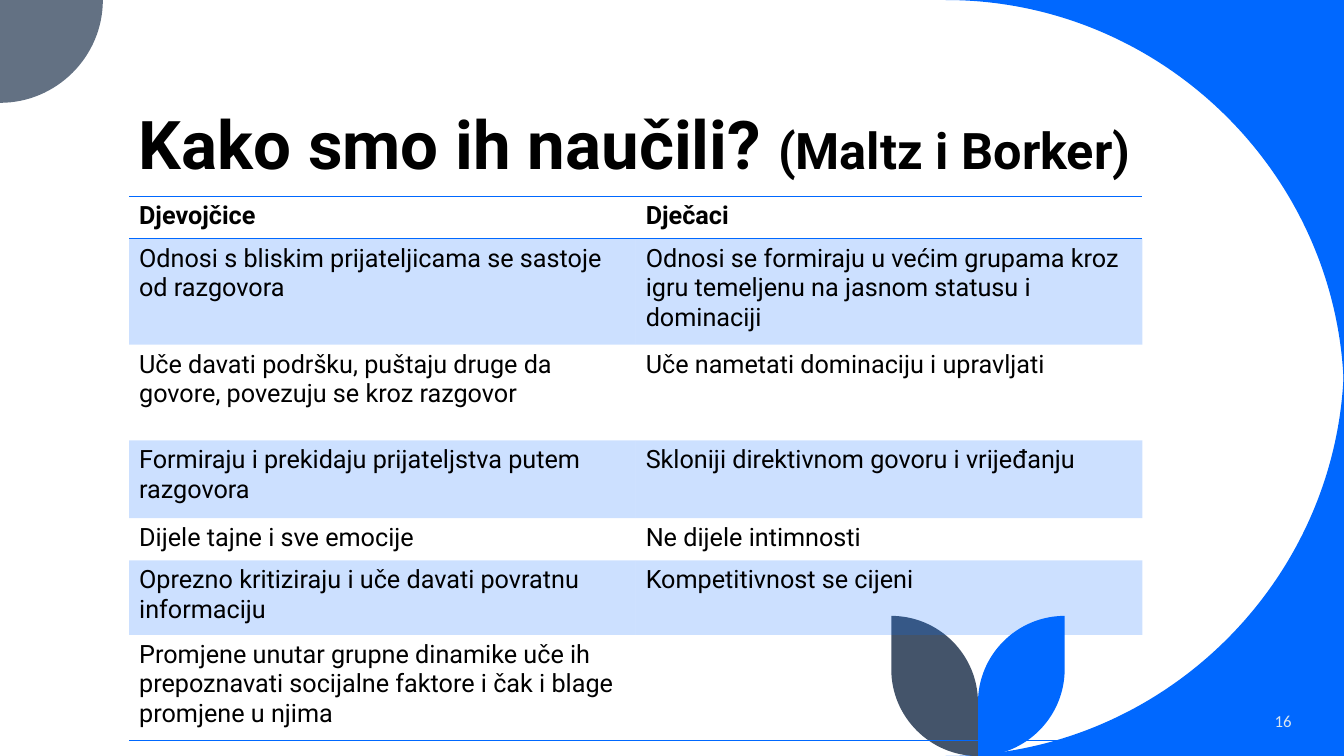
"""Build the slide on how girls and boys learn to talk."""
from lxml import etree
from pptx import Presentation
from pptx import util as u
from pptx.dml.color import RGBColor
from pptx.enum import text
from pptx.oxml import ns

COLORS = {"blue": "0068FF", "grey": "637183", "slate": "44546A",
          "black": "000000", "pale": "DAE5EF"}
NO_STYLE = "{2D5ABB26-0587-4C30-8999-92F81FD0307C}"
ROUNDNESS = 0.55
ROW_HEIGHTS = [0.42, 1.05, 0.95, 0.77, 0.42, 0.74, 1.05]
ROWS = [
    ("Djevojčice", "Dječaci"),
    ("Odnosi s bliskim prijateljicama se sastoje od razgovora",
     "Odnosi se formiraju u većim grupama kroz igru temeljenu na jasnom statusu i dominaciji"),
    ("Uče davati podršku, puštaju druge da govore, povezuju se kroz razgovor",
     "Uče nametati dominaciju i upravljati"),
    ("Formiraju i prekidaju prijateljstva putem razgovora",
     "Skloniji direktivnom govoru i vrijeđanju"),
    ("Dijele tajne i sve emocije", "Ne dijele intimnosti"),
    ("Oprezno kritiziraju i uče davati povratnu informaciju",
     "Kompetitivnost se cijeni"),
    ("Promjene unutar grupne dinamike uče ih prepoznavati socijalne faktore "
     "i čak i blage promjene u njima", ""),
]


def rgb(name):
    """Return the named colour."""
    return RGBColor.from_string(COLORS[name])


def style_font(font, size, color, face="Roboto", bold=False):
    """Set the look of a font."""
    font.size, font.name, font.bold = u.Pt(size), face, bold
    font.color.rgb = rgb(color)


def bend(segment, start, end, corner, origin):
    """Turn a straight segment into a quarter arc that bulges towards a corner."""
    segment.tag = ns.qn("a:cubicBezTo")
    controls = [[p + ROUNDNESS * (k - p) for p, k in zip(point, corner)]
                for point in (start, end)]
    for position, control in enumerate(controls):
        x, y = (str(u.Inches(value) - offset) for value, offset in zip(control, origin))
        segment.insert(position, segment.makeelement(ns.qn("a:pt"), {"x": x, "y": y}))


def add_outline(shapes, points, corners, color):
    """Draw a filled outline, rounding the segments whose end has a corner."""
    places = [(u.Inches(x), u.Inches(y)) for x, y in points]
    builder = shapes.build_freeform(*places[0])
    builder.add_line_segments(places[1:], close=True)
    outline = builder.convert_to_shape()
    origin = outline.left, outline.top
    segments = list(outline._element.iter(ns.qn("a:lnTo")))
    for segment, start, end in zip(segments, points, points[1:]):
        if end in corners:
            bend(segment, start, end, corners[end], origin)
    outline.shadow.inherit = False
    outline.fill.solid()
    outline.fill.fore_color.rgb = rgb(color)
    outline.line.fill.background()


def add_leaf(shapes, side, color):
    """Draw one leaf to the left (-1) or right (1) of the stem."""
    stem, top, bottom, width = 9.7, 6.11, 7.5, 0.86
    tip = round(stem + side * width, 2)
    points = [(tip, top), (tip, bottom - width), (stem, bottom),
              (stem, top + width), (tip, top)]
    corners = {(stem, bottom): (tip, bottom), (tip, top): (stem, top)}
    add_outline(shapes, points, corners, color)


def add_decoration(slide):
    """Draw the corner pieces and the pair of leaves."""
    left, right, radius, bottom = 9.38, 13.33, 3.95, 7.5
    edge = (right, radius)
    add_outline(slide.shapes, [(right, 0), (left, 0), edge], {edge: (right, 0)}, "blue")
    end = (left, bottom)
    add_outline(slide.shapes, [(right, bottom - radius), end, (right, bottom)],
                {end: (right, bottom)}, "blue")
    foot = (0, 1.02)
    add_outline(slide.shapes, [(0, 0), (1.02, 0), foot], {foot: (1.02, 1.02)}, "grey")
    leaves = slide.shapes.add_group_shape().shapes
    add_leaf(leaves, 1, "blue")
    add_leaf(leaves, -1, "slate")


def add_textbox(slide, left, top, width, height, anchor):
    """Add a wrapping text box and return its first paragraph."""
    frame = slide.shapes.add_textbox(*map(u.Inches, (left, top, width, height))).text_frame
    frame.word_wrap = True
    frame.vertical_anchor = anchor
    return frame.paragraphs[0]


def add_title(slide):
    """Add the title with its smaller source note."""
    title = add_textbox(slide, 1.28, 0.42, 10.69, 1.45, text.MSO_ANCHOR.BOTTOM)
    title.line_spacing = 0.9
    for words, size in (("Kako smo ih naučili? ", 48), ("(Maltz i Borker)", 36)):
        run = title.add_run()
        run.text = words
        style_font(run.font, size, "black", bold=True)


def add_page_number(slide):
    """Add the page number."""
    number = add_textbox(slide, 11.1, 6.95, 1.81, 0.4, text.MSO_ANCHOR.MIDDLE)
    number.text = "16"
    number.alignment = text.PP_ALIGN.RIGHT
    style_font(number.font, 12, "pale", "Calibri")


def add_border(cell, edges):
    """Rule the given edges of a cell in blue."""
    properties = cell._tc.get_or_add_tcPr()
    for position, edge in enumerate(edges):
        line = etree.Element(ns.qn(f"a:ln{edge}"), w=str(u.Pt(1)))
        fill = etree.SubElement(line, ns.qn("a:solidFill"))
        etree.SubElement(fill, ns.qn("a:srgbClr"), val=COLORS["blue"])
        properties.insert(position, line)


def fill_band(cell):
    """Fill a cell with blue at 20 percent opacity."""
    cell.fill.solid()
    cell.fill.fore_color.rgb = rgb("blue")
    tint = cell._tc.tcPr.find(".//" + ns.qn("a:srgbClr"))
    etree.SubElement(tint, ns.qn("a:alpha"), val="20000")


def add_comparison(slide):
    """Add the table that compares girls and boys."""
    frame = slide.shapes.add_table(len(ROWS), 2, u.Inches(1.28), u.Inches(1.95),
                                   u.Inches(10.05), u.Inches(sum(ROW_HEIGHTS)))
    table = frame.table
    table._tbl.tblPr.find(ns.qn("a:tableStyleId")).text = NO_STYLE
    edges = {0: "TB", len(ROWS) - 1: "B"}
    for r, (words, height) in enumerate(zip(ROWS, ROW_HEIGHTS)):
        table.rows[r].height = u.Inches(height)
        for c, sentence in enumerate(words):
            cell = table.cell(r, c)
            cell.text = sentence
            style_font(cell.text_frame.paragraphs[0].font, 18, "black", bold=r == 0)
            if r % 2:
                fill_band(cell)
            else:
                cell.fill.background()
            add_border(cell, edges.get(r, ""))


def main():
    """Build and save the slide."""
    deck = Presentation()
    deck.slide_width, deck.slide_height = u.Inches(13.33), u.Inches(7.5)
    slide = deck.slides.add_slide(deck.slide_layouts[6])
    add_decoration(slide)
    add_title(slide)
    add_page_number(slide)
    add_comparison(slide)
    deck.save("out.pptx")


if __name__ == "__main__":
    main()
